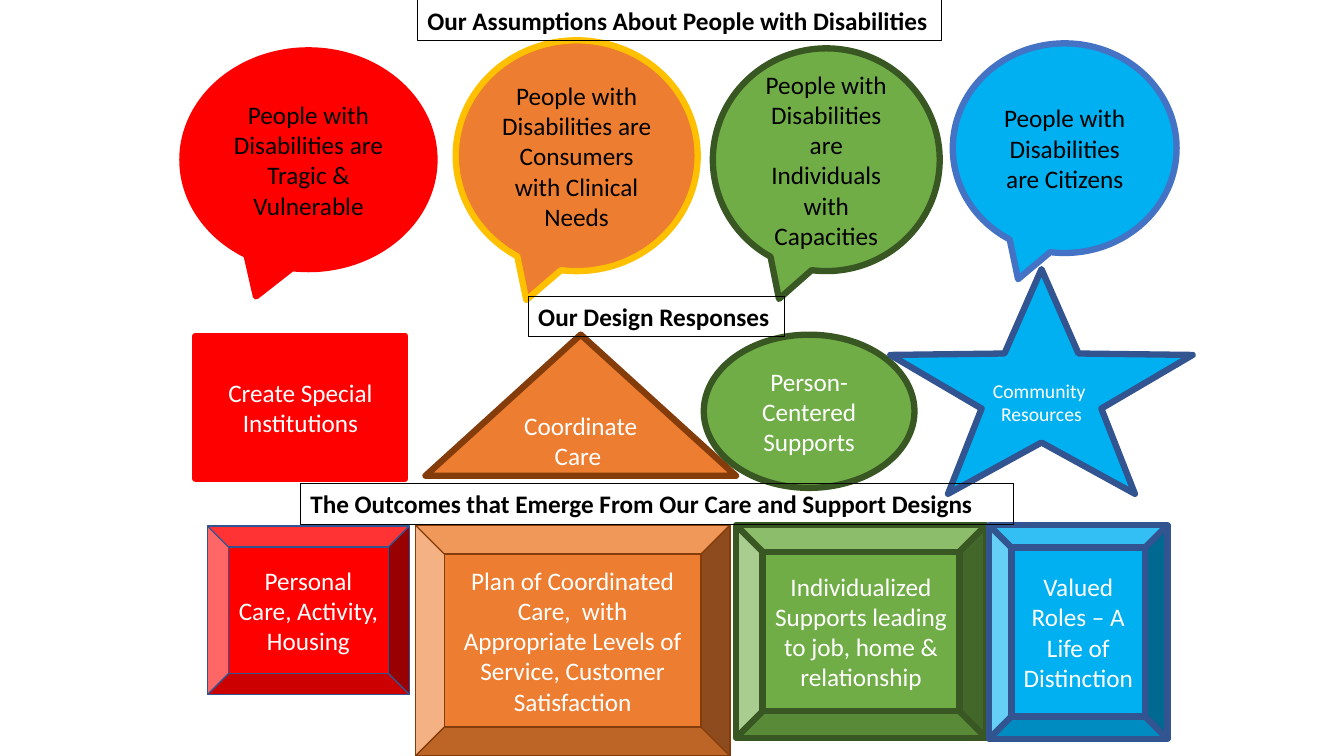
import pptx
import pptx.util
import pptx.dml.color
import pptx.enum.shapes
import pptx.enum.text

Inches = pptx.util.Inches
Pt = pptx.util.Pt
RGBColor = pptx.dml.color.RGBColor
SHAPE = pptx.enum.shapes.MSO_SHAPE
ANCHOR = pptx.enum.text.MSO_ANCHOR
ALIGN = pptx.enum.text.PP_ALIGN
AUTO_SIZE = pptx.enum.text.MSO_AUTO_SIZE

BLACK = RGBColor(0x00, 0x00, 0x00)
WHITE = RGBColor(0xFF, 0xFF, 0xFF)
RED = RGBColor(0xFF, 0x00, 0x00)
ORANGE = RGBColor(0xED, 0x7D, 0x31)
GOLD = RGBColor(0xFF, 0xC0, 0x00)
BROWN = RGBColor(0x84, 0x3C, 0x0B)
GREEN = RGBColor(0x70, 0xAD, 0x47)
DARK_GREEN = RGBColor(0x38, 0x57, 0x23)
SKY = RGBColor(0x00, 0xB0, 0xF0)
BLUE = RGBColor(0x44, 0x72, 0xC4)
NAVY = RGBColor(0x32, 0x54, 0x91)


def style_text(frame, text, color, size=18, bold=False, align=ALIGN.CENTER):
    paragraph = frame.paragraphs[0]
    paragraph.text = text
    paragraph.alignment = align
    paragraph.font.name = "Calibri"
    paragraph.font.size = Pt(size)
    paragraph.font.bold = bold
    paragraph.font.color.rgb = color


def add_idea(slide, kind, box, text, fill, outline, width=4.5, color=WHITE, size=18):
    idea = slide.shapes.add_shape(kind, *map(Inches, box))
    idea.shadow.inherit = False
    idea.fill.solid()
    idea.fill.fore_color.rgb = fill
    idea.line.color.rgb = outline
    idea.line.width = Pt(width)
    idea.text_frame.word_wrap = True
    idea.text_frame.vertical_anchor = ANCHOR.MIDDLE
    style_text(idea.text_frame, text, color, size)
    return idea


def add_assumption(slide, box, text, fill, outline):
    add_idea(slide, SHAPE.OVAL_CALLOUT, box, text, fill, outline, color=BLACK)


def add_outcome(slide, box, text, fill, outline, width):
    add_idea(slide, SHAPE.BEVEL, box, text, fill, outline, width)


def add_community_star(slide):
    star = add_idea(slide, SHAPE.STAR_5_POINT, (8.83, 2.67, 3, 2.23),
                    "Community  Resources", SKY, NAVY, size=14)
    star.adjustments[0] = 0.198
    star.text_frame.margin_top = Inches(0.13)


def add_heading(slide, box, text, wrap=True):
    heading = slide.shapes.add_textbox(*map(Inches, box))
    heading.line.color.rgb = BLACK
    heading.line.width = Pt(0.75)
    heading.text_frame.word_wrap = wrap
    heading.text_frame.auto_size = AUTO_SIZE.SHAPE_TO_FIT_TEXT
    style_text(heading.text_frame, text, BLACK, bold=True, align=ALIGN.LEFT)


def main():
    deck = pptx.Presentation()
    deck.slide_width = Inches(13.33)
    deck.slide_height = Inches(7.5)
    slide = deck.slides.add_slide(deck.slide_layouts[6])

    add_assumption(slide, (1.81, 0.5, 2.5, 2.17),
                   "People with Disabilities are Tragic & Vulnerable", RED, RED)
    add_idea(slide, SHAPE.RECTANGLE, (1.94, 3.33, 2.08, 1.42),
             "Create Special Institutions", RED, RED)
    add_assumption(slide, (4.52, 0.4, 2.4, 2.29),
                   "People with Disabilities are Consumers with Clinical Needs", ORANGE, GOLD)
    add_idea(slide, SHAPE.ISOSCELES_TRIANGLE, (4.22, 3.32, 3.08, 1.4),
             "Coordinate Care ", ORANGE, BROWN)
    add_assumption(slide, (7.07, 0.48, 2.25, 2.21),
                   "People with Disabilities are Individuals with Capacities", GREEN, DARK_GREEN)
    add_idea(slide, SHAPE.OVAL, (6.98, 3.32, 2.09, 1.52),
             "Person-Centered Supports", GREEN, DARK_GREEN)
    add_assumption(slide, (9.45, 0.43, 2.22, 2.08),
                   "People with Disabilities are Citizens", SKY, BLUE)
    add_community_star(slide)

    add_outcome(slide, (2.06, 5.22, 2, 1.67),
                "Personal Care, Activity, Housing", RED, NAVY, 1)
    add_outcome(slide, (4.12, 5.21, 3.12, 2.29),
                "Plan of Coordinated Care,  with Appropriate Levels of Service, "
                "Customer Satisfaction", ORANGE, BROWN, 1)
    add_outcome(slide, (7.3, 5.21, 2.48, 2.11),
                "Individualized Supports leading to job, home & relationship",
                GREEN, DARK_GREEN, 4.5)
    add_outcome(slide, (9.81, 5.21, 1.77, 2.12),
                "Valued Roles – A Life of Distinction", SKY, NAVY, 4.5)

    add_heading(slide, (4.14, 0, 5.2, 0.4),
                "Our Assumptions About People with Disabilities", wrap=False)
    add_heading(slide, (5.24, 2.94, 2.54, 0.4), "Our Design Responses")
    add_heading(slide, (2.98, 4.8, 7.07, 0.4),
                "The Outcomes that Emerge From Our Care and Support Designs")

    deck.save("out.pptx")


if __name__ == "__main__":
    main()
